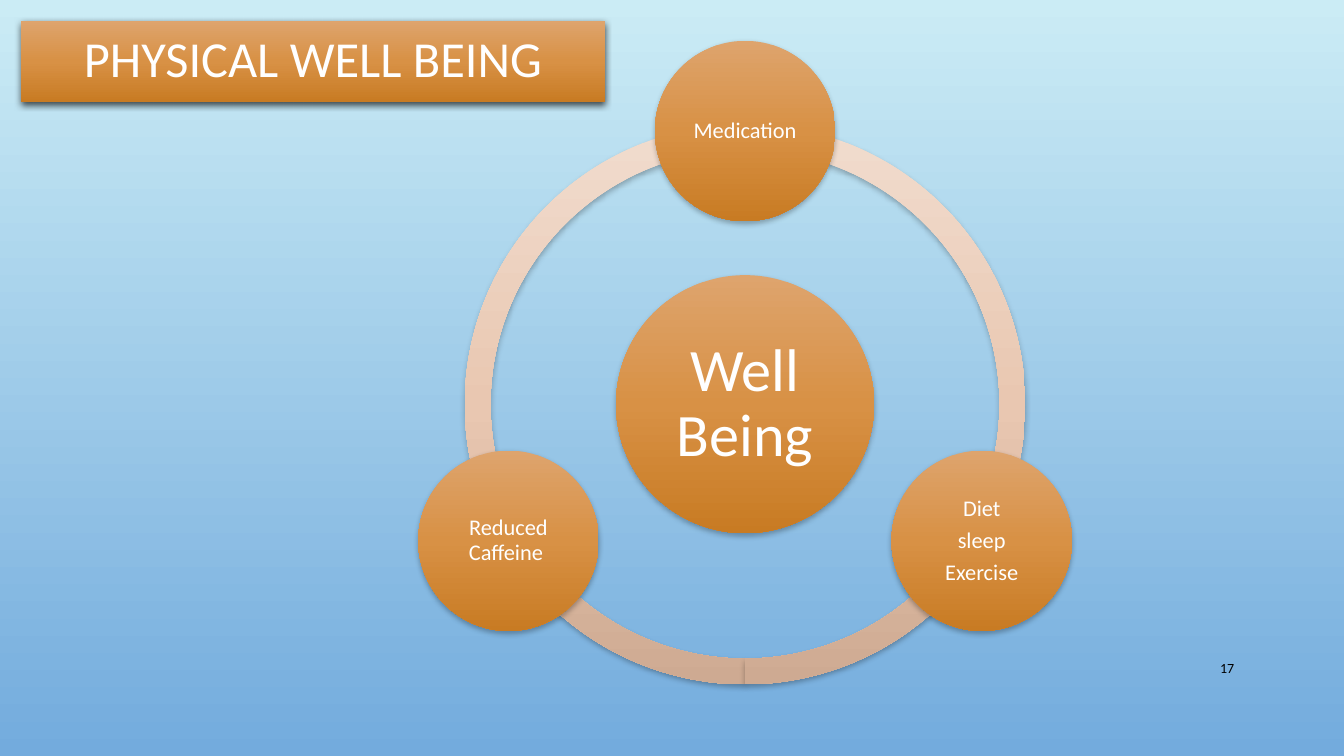
"""Build the physical well being slide with its ring of three topics."""
from math import cos, radians, sin

from lxml.etree import SubElement
from pptx import Presentation
from pptx.dml.color import RGBColor
from pptx.enum.shapes import MSO_SHAPE as Shape
from pptx.enum.text import MSO_ANCHOR as Anchor, PP_ALIGN as Align
from pptx.oxml.ns import qn
from pptx.util import Inches, Pt

TITLE = "PHYSICAL WELL BEING"
HUB = ["Well Being"]
TOPICS = [["Medication"], ["Diet", " sleep ", "Exercise"], ["Reduced Caffeine "]]
PAGE_NUMBER = "17"
ARCS = [(90, 162), (18, 90), (162, 18)]

COLORS = {
    "sky": ["CBECF5", "73ABDD"],
    "orange": ["DEA46D", "D89145", "C87B23"],
    "ring": ["F1DCCE", "E9C7B1", "CEAA92"],
    "white": "FFFFFF",
    "black": "000000",
}
FONT = "Calibri"
CENTER_X, CENTER_Y = 7.39, 4.01
RING_SIZE, HUB_SIZE, TOPIC_SIZE = 5.56, 2.56, 1.79
ORBIT = 2.71


def set_gradient(owner, fill, colors):
    fill.solid()
    solid = next(owner.iter(qn("a:solidFill")))
    gradient = solid.makeelement(qn("a:gradFill"), {"rotWithShape": "1"})
    stops = SubElement(gradient, qn("a:gsLst"))
    for index, color in enumerate(colors):
        position = index * 100000 // (len(colors) - 1)
        stop = SubElement(stops, qn("a:gs"), pos=str(position))
        SubElement(stop, qn("a:srgbClr"), val=color)
    SubElement(gradient, qn("a:lin"), ang="5400000", scaled="0")
    solid.getparent().replace(solid, gradient)


def set_shadow(shape, opacity, blur):
    shape.shadow.inherit = False
    effects = shape._element.spPr.find(qn("a:effectLst"))
    shadow = SubElement(effects, qn("a:outerShdw"), blurRad=str(Pt(blur)),
                        dist=str(Pt(2)), dir="5400000", rotWithShape="0")
    color = SubElement(shadow, qn("a:srgbClr"), val=COLORS["black"])
    SubElement(color, qn("a:alpha"), val=str(opacity * 1000))


def add_shaded(page, kind, box, colors, opacity=28, blur=4):
    shape = page.shapes.add_shape(kind, *map(Inches, box))
    set_gradient(shape._element.spPr, shape.fill, colors)
    shape.line.fill.background()
    set_shadow(shape, opacity, blur)
    return shape


def write(shape, lines, size, color, align=Align.CENTER, spacing=0.9, inset=None):
    frame = shape.text_frame
    frame.word_wrap = True
    frame.vertical_anchor = Anchor.MIDDLE
    if inset is not None:
        frame.margin_left = frame.margin_right = Inches(inset)
        frame.margin_top = frame.margin_bottom = Inches(inset)
    frame.text = "\n".join(lines)
    for index, para in enumerate(frame.paragraphs):
        para.alignment = align
        para.line_spacing = spacing
        para.space_before = Pt(0.35 * size if index else 0)
        for span in para.runs:
            span.font.name = FONT
            span.font.size = Pt(size)
            span.font.color.rgb = RGBColor.from_string(color)


def centered(x, y, size):
    return x - size / 2, y - size / 2, size, size


def main():
    deck = Presentation()
    deck.slide_width, deck.slide_height = Inches(13.33), Inches(7.5)
    page = deck.slides.add_slide(deck.slide_layouts[6])
    background = page.background.fill
    set_gradient(page._element, background, COLORS["sky"])

    title = add_shaded(page, Shape.RECTANGLE, (0.21, 0.21, 5.79, 0.8),
                       COLORS["orange"], 69, 5)
    write(title, [TITLE], 36, COLORS["white"])

    for start, end in ARCS:
        arc = add_shaded(page, Shape.BLOCK_ARC,
                         centered(CENTER_X, CENTER_Y, RING_SIZE), COLORS["ring"])
        for index, value in enumerate((start * 0.6, end * 0.6, 0.046)):
            arc.adjustments[index] = value

    hub = add_shaded(page, Shape.OVAL, centered(CENTER_X, CENTER_Y, HUB_SIZE),
                     COLORS["orange"])
    write(hub, HUB, 43, COLORS["white"], inset=0.06)

    for index, lines in enumerate(TOPICS):
        angle = radians(index * 360 / len(TOPICS) - 90)
        x, y = CENTER_X + ORBIT * cos(angle), CENTER_Y + ORBIT * sin(angle)
        topic = add_shaded(page, Shape.OVAL, centered(x, y, TOPIC_SIZE),
                           COLORS["orange"])
        write(topic, lines, 16, COLORS["white"], inset=0.02)

    number = page.shapes.add_textbox(*map(Inches, (11.5, 6.43, 0.84, 0.4)))
    write(number, [PAGE_NUMBER], 10, COLORS["black"], Align.RIGHT, 1.0)

    deck.save("out.pptx")


if __name__ == "__main__":
    main()
